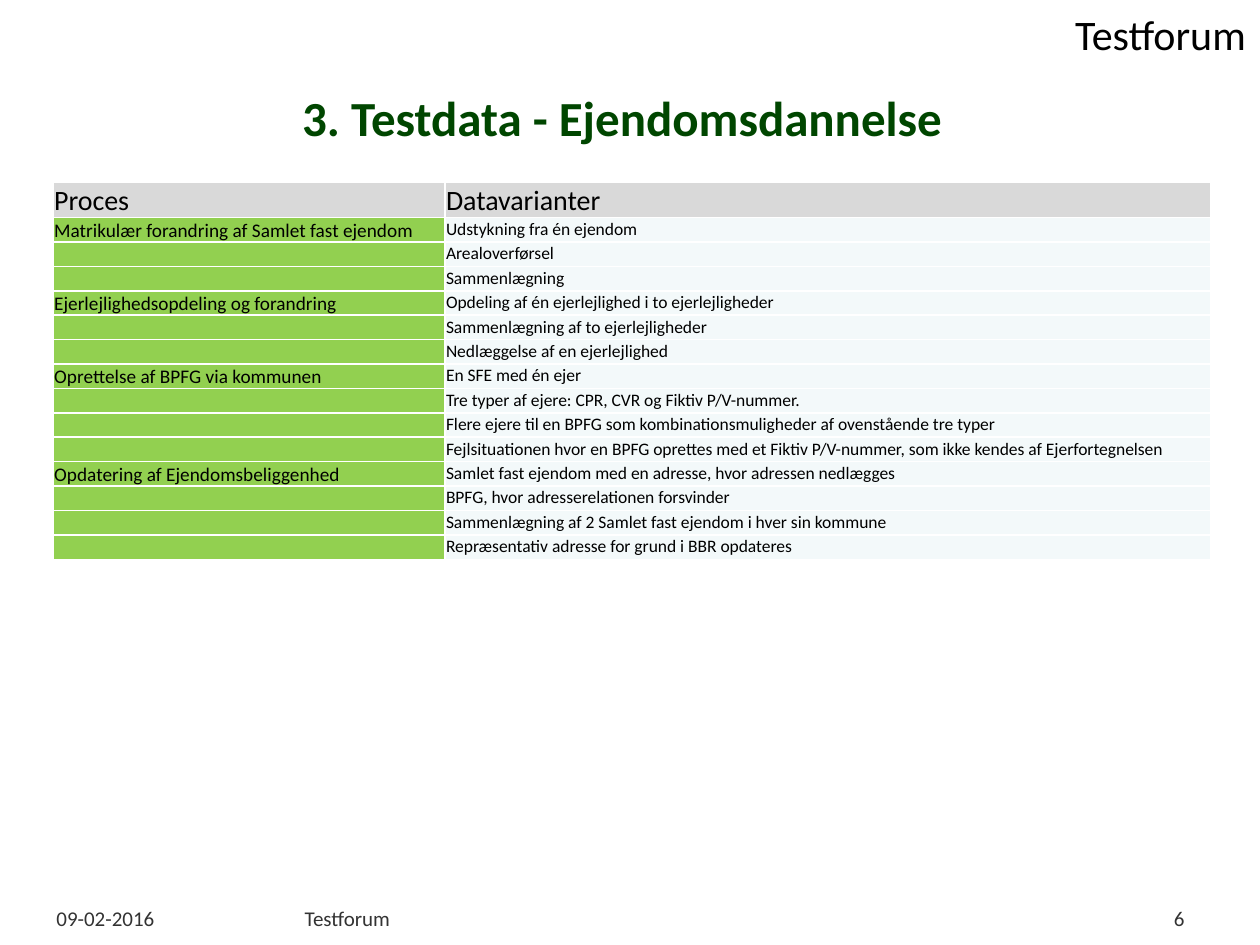
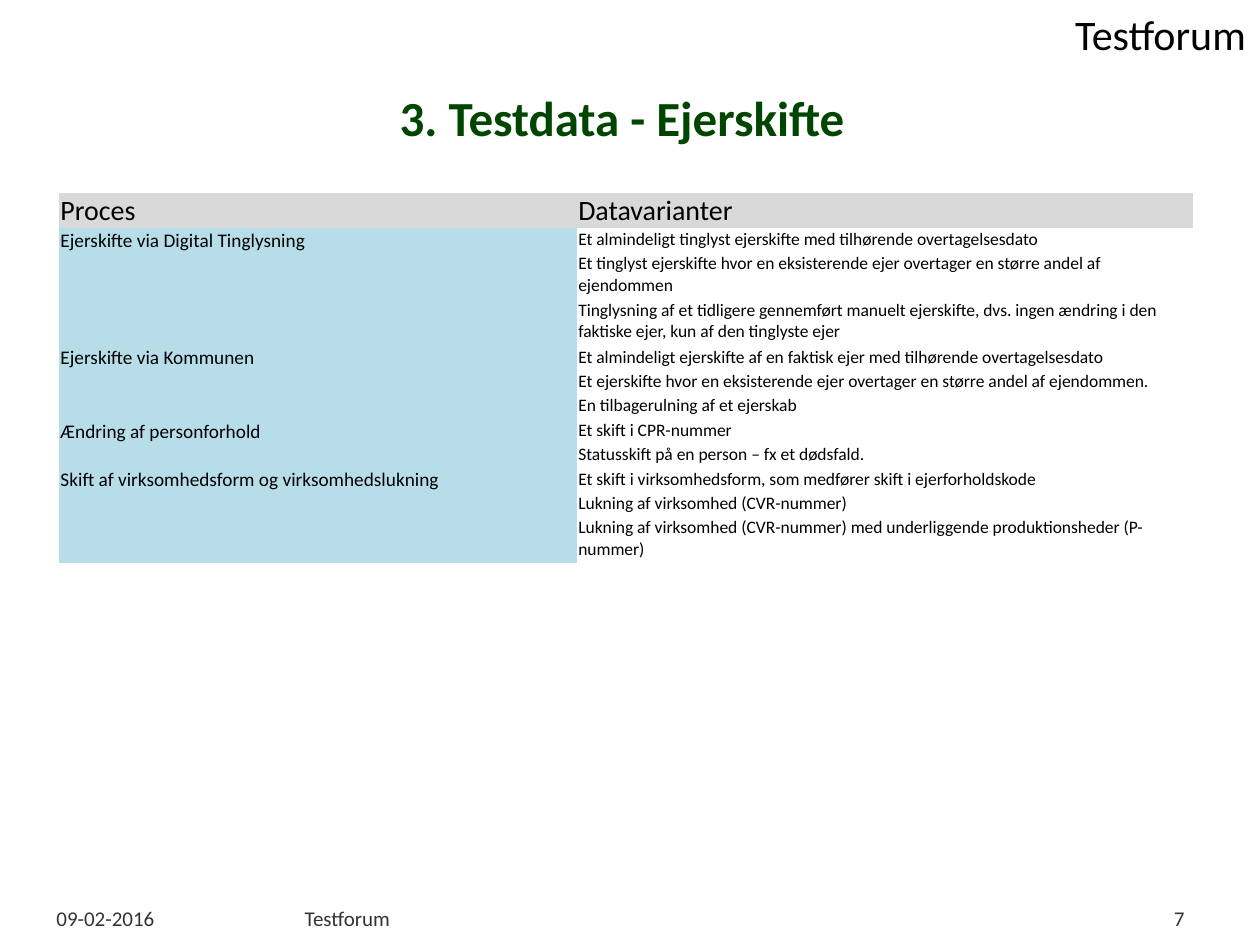
from dataclasses import dataclass

from lxml.etree import SubElement
from pptx import Presentation
from pptx.dml.color import RGBColor as RGB
from pptx.enum.text import MSO_ANCHOR as ANCHOR, MSO_AUTO_SIZE as FIT, PP_ALIGN as AL
from pptx.oxml.ns import qn
from pptx.util import Inches, Pt

# Grid of square units, 10 columns by 7.5 rows
COLS, ROWS, UNIT = 10, 7.5, Inches(1)
TITLE_ONLY = 5
PLAIN_TABLE = "{2D5ABB26-0587-4C30-8999-92F81FD0307C}"


@dataclass(frozen=True)
class Theme:
    font: str = "Calibri"
    text: str = "000000"
    title: str = "004600"
    footer: str = "333333"
    header_fill: str = "D9D9D9"
    border: str = "FFFFFF"
    brand_size: int = 24
    title_size: int = 28
    header_size: int = 16
    process_size: int = 11
    variant_size: int = 10
    footer_size: int = 12


T = Theme()

HEADINGS = ("Proces", "Datavarianter")
SLIDES = [
    dict(
        number=6, title="3. Testdata - Ejendomsdannelse ",
        table=dict(
            at=(0.42, 1.45), widths=(3.11, 6.08),
            fills=("92D050", "F3F9FA"), bordered=True,
            groups={
                "Matrikulær forandring af Samlet fast ejendom": [
                    "Udstykning fra én ejendom", "Arealoverførsel", "Sammenlægning"],
                "Ejerlejlighedsopdeling og forandring": [
                    "Opdeling af én ejerlejlighed i to ejerlejligheder",
                    "Sammenlægning af to ejerlejligheder",
                    "Nedlæggelse af en ejerlejlighed"],
                "Oprettelse af BPFG via kommunen": [
                    "En SFE med én ejer",
                    "Tre typer af ejere: CPR, CVR og Fiktiv P/V-nummer.",
                    "Flere ejere til en BPFG som kombinationsmuligheder af ovenstående tre typer",
                    "Fejlsituationen hvor en BPFG oprettes med et Fiktiv P/V-nummer, "
                    "som ikke kendes af Ejerfortegnelsen"],
                "Opdatering af Ejendomsbeliggenhed": [
                    "Samlet fast ejendom med en adresse, hvor adressen nedlægges",
                    "BPFG, hvor adresserelationen forsvinder",
                    "Sammenlægning af 2 Samlet fast ejendom i hver sin kommune",
                    "Repræsentativ adresse for grund i BBR opdateres"],
            })),
    dict(
        number=7, title="3. Testdata - Ejerskifte ",
        table=dict(
            at=(0.47, 1.53), widths=(4.11, 4.89),
            fills=("B7DEE8", None), tall_rows=(2, 3, 11),
            groups={
                "Ejerskifte via Digital Tinglysning": [
                    "Et almindeligt tinglyst ejerskifte med tilhørende overtagelsesdato",
                    "Et tinglyst ejerskifte hvor en eksisterende ejer overtager "
                    "en større andel af ejendommen",
                    "Tinglysning af et tidligere gennemført manuelt ejerskifte, dvs. ingen "
                    "ændring i den faktiske ejer, kun af den tinglyste ejer"],
                "Ejerskifte via Kommunen": [
                    "Et almindeligt ejerskifte af en faktisk ejer med tilhørende overtagelsesdato",
                    "Et ejerskifte hvor en eksisterende ejer overtager en større andel "
                    "af ejendommen.",
                    "En tilbagerulning af et ejerskab"],
                "Ændring af personforhold": [
                    "Et skift i CPR-nummer", "Statusskift på en person – fx et dødsfald."],
                "Skift af virksomhedsform og virksomhedslukning": [
                    "Et skift i virksomhedsform, som medfører skift i ejerforholdskode",
                    "Lukning af virksomhed (CVR-nummer)",
                    "Lukning af virksomhed (CVR-nummer) med underliggende "
                    "produktionsheder (P-nummer)"],
            })),
]


def grid(*lengths):
    return [int(n * UNIT) for n in lengths]


def set_attrs(obj, values):
    for name, value in values.items():
        setattr(obj, name, value)


def write(tf, text, size, color=T.text, align=AL.LEFT, bold=False):
    p = tf.paragraphs[0]
    p.alignment = align
    if not text:  # keep an empty cell as low as its row
        p._p.get_or_add_endParaRPr().set("sz", str(size * 100))
        return
    r = p.add_run()
    r.text = text
    set_attrs(r.font, dict(name=T.font, size=Pt(size), bold=bold))
    r.font.color.rgb = RGB.from_string(color)


def add_label(s, box, text, size, color, align=AL.LEFT, wrap=True):
    tf = s.shapes.add_textbox(*grid(*box)).text_frame
    tf.word_wrap = wrap
    write(tf, text, size, color, align)


def add_title(s, text):
    sp = s.shapes.title
    set_attrs(sp, dict(zip(("left", "top", "width", "height"), grid(0.48, 0.61, 9, 0.63))))
    set_attrs(sp.text_frame, dict(vertical_anchor=ANCHOR.MIDDLE, auto_size=FIT.NONE))
    write(sp.text_frame, text, T.title_size, T.title, AL.CENTER, True)


def add_frame(s, number):
    """Name in the top corner, and date, name and number at the foot."""
    add_label(s, (8.42, 0.02, 1.58, 0.5), "Testforum", T.brand_size, T.text, AL.CENTER, False)
    for left, width, text, align in (
            (0.35, 2.37, "09-02-2016", AL.LEFT),
            (2.32, 6.22, "Testforum", AL.LEFT),
            (8.78, 0.72, str(number), AL.RIGHT)):
        add_label(s, (left, 7.14, width, 0.16), text, T.footer_size, T.footer, align)


def add_borders(cell):
    tc_pr = cell._tc.get_or_add_tcPr()
    for i, side in enumerate(("lnL", "lnR", "lnT", "lnB")):
        ln = tc_pr.makeelement(qn(f"a:{side}"), {"w": str(Pt(1))})
        SubElement(SubElement(ln, qn("a:solidFill")), qn("a:srgbClr"), val=T.border)
        tc_pr.insert(i, ln)


def format_cell(cell, text, size, fill, anchor, bordered):
    set_attrs(cell, dict(margin_left=Inches(0.01), margin_right=Inches(0.01),
                         margin_top=Inches(0.01), margin_bottom=0, vertical_anchor=anchor))
    write(cell.text_frame, text, size)
    if fill:
        cell.fill.solid()
        cell.fill.fore_color.rgb = RGB.from_string(fill)
    else:
        cell.fill.background()
    if bordered:
        add_borders(cell)


def add_process_table(s, at, widths, fills, groups, bordered=False, tall_rows=()):
    # The process is named only beside its first variant
    rows = [HEADINGS] + [(process if i == 0 else "", variant)
                         for process, variants in groups.items()
                         for i, variant in enumerate(variants)]
    heights = [0.37 if i in tall_rows else 0.19 for i in range(len(rows))]
    table = s.shapes.add_table(len(rows), len(widths),
                               *grid(*at, sum(widths), sum(heights))).table
    set_attrs(table, dict(first_row=False, horz_banding=False))
    table._tbl.tblPr.find(qn("a:tableStyleId")).text = PLAIN_TABLE
    for column, width in zip(table.columns, grid(*widths)):
        column.width = width
    for i, (row, height) in enumerate(zip(table.rows, grid(*heights))):
        row.height = height
        for j, cell in enumerate(row.cells):
            if i == 0:
                size, fill, anchor = T.header_size, T.header_fill, ANCHOR.BOTTOM
            else:
                size, fill, anchor = (T.process_size, T.variant_size)[j], fills[j], ANCHOR.TOP
            format_cell(cell, rows[i][j], size, fill, anchor, bordered)


def main():
    prs = Presentation()
    set_attrs(prs, dict(zip(("slide_width", "slide_height"), grid(COLS, ROWS))))
    for content in SLIDES:
        s = prs.slides.add_slide(prs.slide_layouts[TITLE_ONLY])
        add_title(s, content["title"])
        add_frame(s, content["number"])
        add_process_table(s, **content["table"])
    prs.save("out.pptx")


if __name__ == "__main__":
    main()
